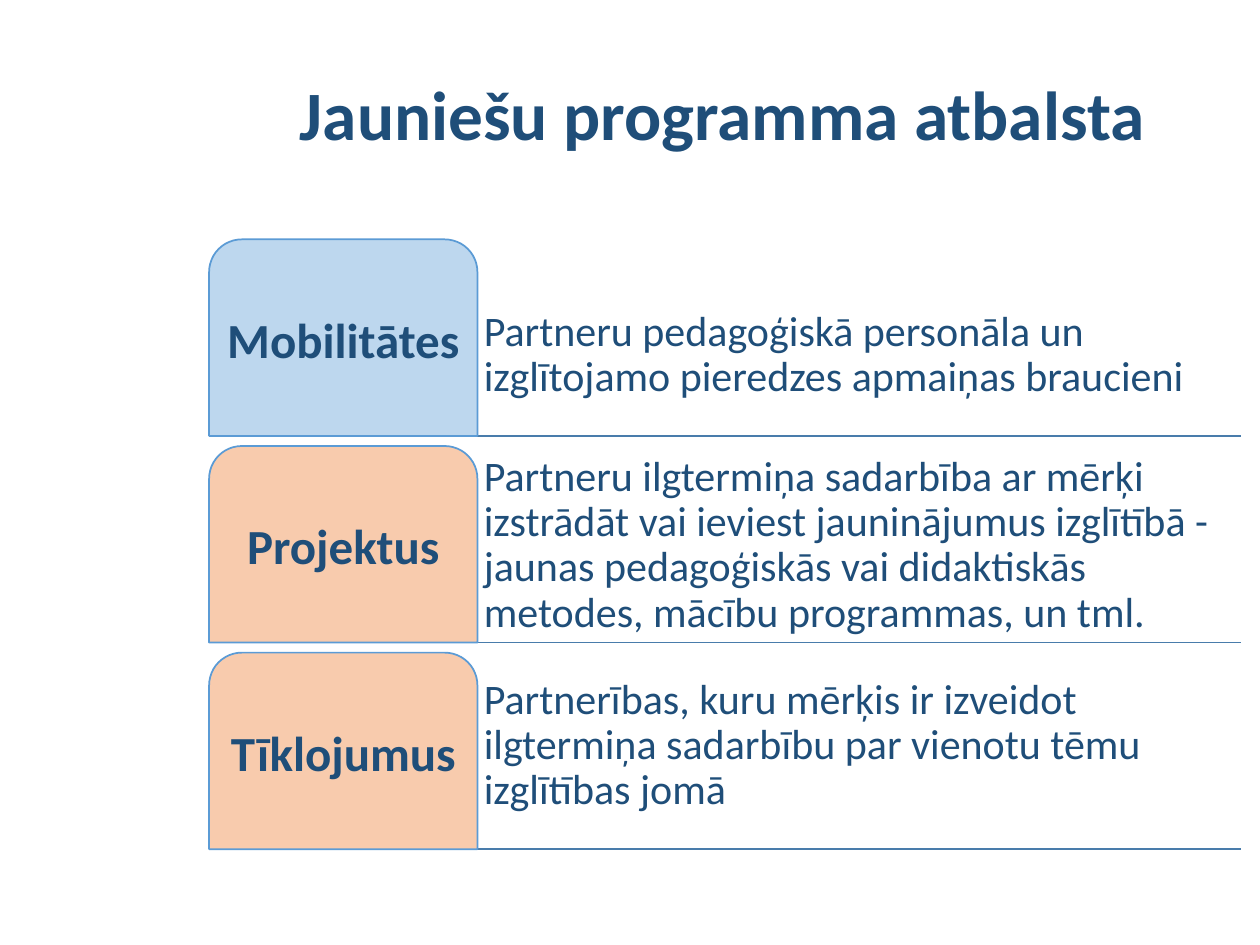
from dataclasses import dataclass

from lxml.etree import SubElement
from pptx import Presentation
from pptx.dml.color import RGBColor
from pptx.enum.shapes import MSO_CONNECTOR, MSO_SHAPE
from pptx.enum.text import MSO_ANCHOR, PP_ALIGN
from pptx.oxml.ns import qn
from pptx.shapes.autoshape import Shape
from pptx.slide import Slide
from pptx.util import Inches, Pt


@dataclass(frozen=True)
class Theme:
    font: str = "Calibri"
    ink: RGBColor = RGBColor(0x1F, 0x4E, 0x79)
    rule: RGBColor = RGBColor(0x49, 0x7C, 0xAB)
    edge: RGBColor = RGBColor(0x5B, 0x9B, 0xD5)
    blue: RGBColor = RGBColor(0xBD, 0xD7, 0xEE)
    peach: RGBColor = RGBColor(0xF8, 0xCB, 0xAD)
    title: float = 39.6
    label: float = 28
    body: float = 24


@dataclass(frozen=True)
class Row:
    label: str
    body: str
    fill: RGBColor
    foot: float = 0.05  # gap below the body text


THEME = Theme()
LEFT, TOP, RIGHT = 1.66, 1.9, 9.85
TAB, HIGH, STEP = 2.13, 1.56, 1.64

ROWS = (
    Row("Mobilitātes",
        "Partneru pedagoģiskā personāla un izglītojamo pieredzes apmaiņas braucieni",
        THEME.blue, 0.28),
    Row("Projektus",
        "Partneru ilgtermiņa sadarbība ar mērķi izstrādāt vai ieviest jauninājumus "
        "izglītībā - jaunas pedagoģiskās vai didaktiskās metodes, mācību programmas, "
        "un tml.",
        THEME.peach),
    Row("Tīklojumus",
        "Partnerības, kuru mērķis ir izveidot ilgtermiņa sadarbību par vienotu tēmu "
        "izglītības jomā",
        THEME.peach, 0.28),
)


def write(shape: Shape, text: str, size: float, bold: bool = True,
          align: PP_ALIGN = PP_ALIGN.CENTER,
          anchor: MSO_ANCHOR = MSO_ANCHOR.MIDDLE,
          inset: float = 0.05, foot: float = 0.05) -> None:
    frame = shape.text_frame
    frame.word_wrap = True
    frame.vertical_anchor = anchor
    frame.margin_left = frame.margin_right = frame.margin_top = Inches(inset)
    frame.margin_bottom = Inches(foot)
    para = frame.paragraphs[0]
    para.text = text
    para.alignment = align
    para.line_spacing = 0.9
    font = para.font
    font.name, font.size, font.bold = THEME.font, Pt(size), bold
    font.color.rgb = THEME.ink


def add_title(slide: Slide, text: str) -> None:
    box = slide.shapes.add_textbox(Inches(2.16), Inches(0.4), Inches(7.15), Inches(1.03))
    write(box, text, THEME.title, inset=0.1)


def add_rule(slide: Slide, y: float) -> None:
    line = slide.shapes.add_connector(
        MSO_CONNECTOR.STRAIGHT, Inches(LEFT), Inches(y), Inches(RIGHT), Inches(y))
    line.line.color.rgb = THEME.rule
    line.line.width = Pt(1)
    SubElement(line._element.spPr, qn("a:effectLst"))


def add_row(slide: Slide, row: Row, top: float) -> None:
    """Draw the rule, the body text and the rounded tab of one row."""
    add_rule(slide, top + HIGH)
    start = LEFT + TAB
    body = slide.shapes.add_textbox(
        Inches(start), Inches(top), Inches(RIGHT - start), Inches(HIGH))
    write(body, row.body, THEME.body, bold=False, align=PP_ALIGN.LEFT,
          anchor=MSO_ANCHOR.BOTTOM, foot=row.foot)

    tab = slide.shapes.add_shape(
        MSO_SHAPE.ROUND_2_SAME_RECTANGLE,
        Inches(LEFT), Inches(top), Inches(TAB), Inches(HIGH))
    tab.shadow.inherit = False
    tab.fill.solid()
    tab.fill.fore_color.rgb = row.fill
    tab.line.color.rgb = THEME.edge
    tab.line.width = Pt(1)
    write(tab, row.label, THEME.label)


def main() -> None:
    deck = Presentation()
    deck.slide_width, deck.slide_height = Inches(10), Inches(7.5)
    slide = deck.slides.add_slide(deck.slide_layouts[6])
    add_title(slide, "Jauniešu programma atbalsta")
    for i, row in enumerate(ROWS):
        add_row(slide, row, TOP + i * STEP)
    deck.save("out.pptx")


if __name__ == "__main__":
    main()
